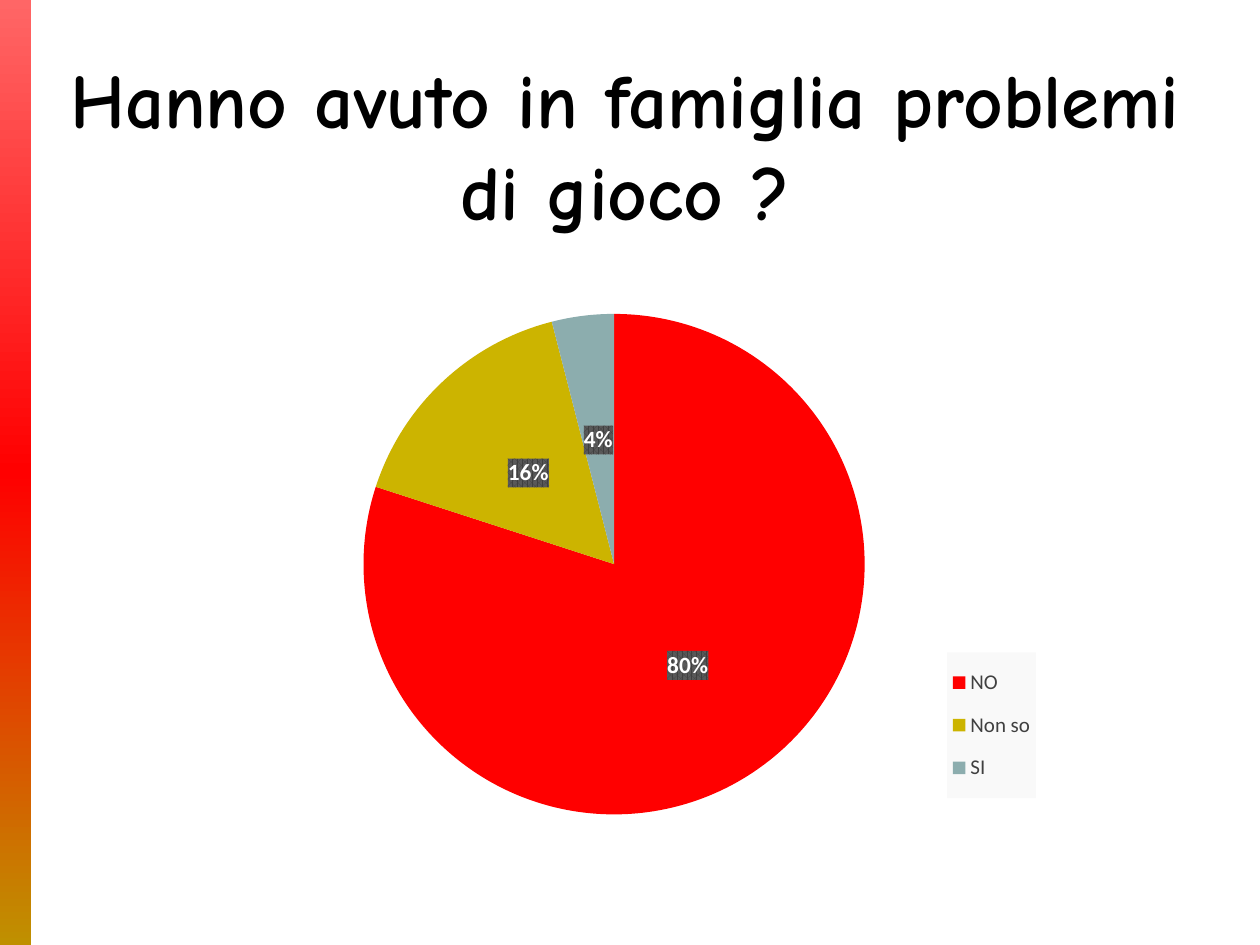
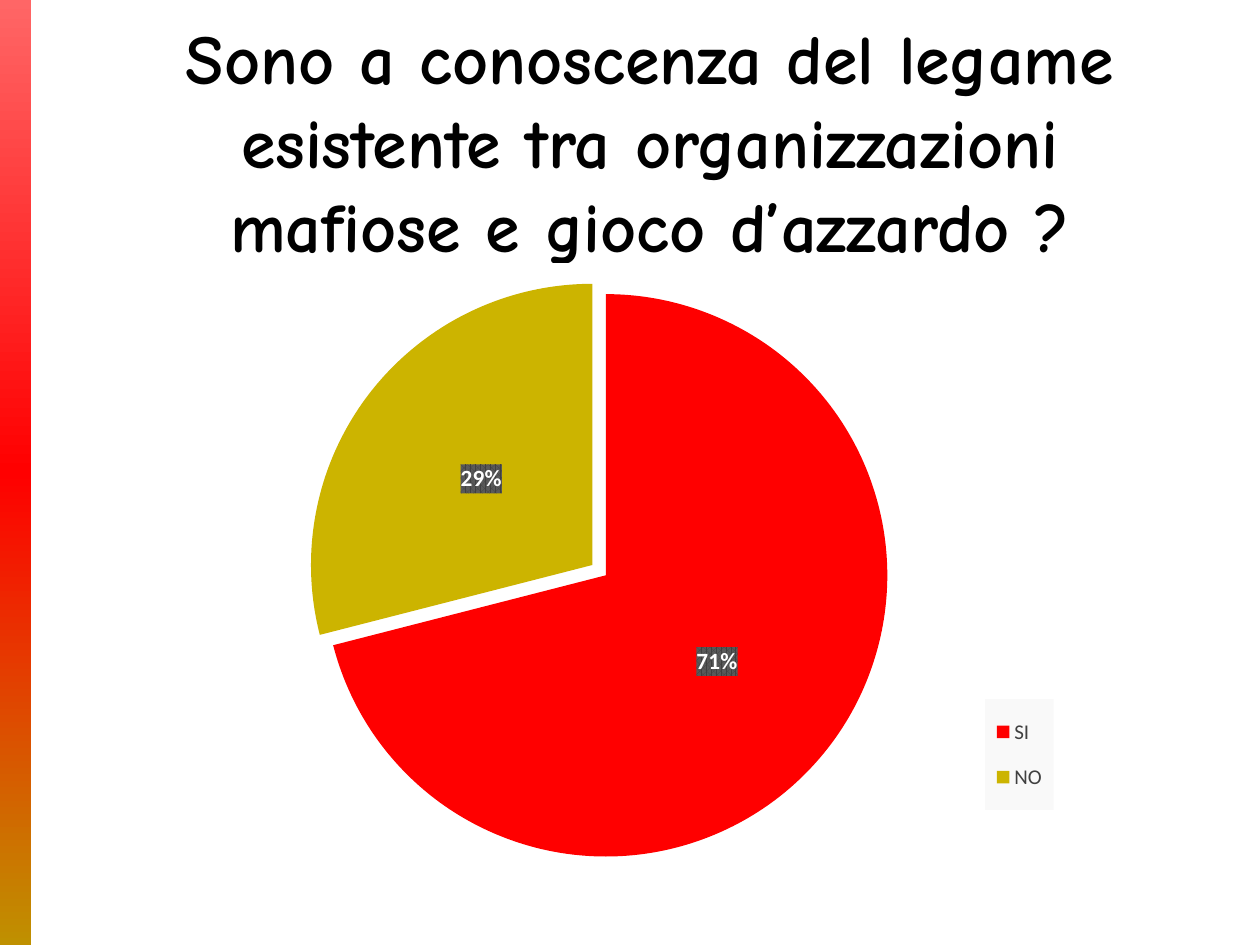
"""Build two survey slides, each with a question and a pie chart of the answers."""
from copy import deepcopy
from dataclasses import dataclass

from pptx import Presentation
from pptx.chart.data import CategoryChartData
from pptx.dml.color import RGBColor
from pptx.enum.chart import XL_CHART_TYPE, XL_LABEL_POSITION, XL_LEGEND_POSITION
from pptx.enum.shapes import MSO_SHAPE
from pptx.enum.text import MSO_ANCHOR, MSO_AUTO_SIZE, PP_ALIGN
from pptx.oxml import parse_xml
from pptx.oxml.ns import nsdecls
from pptx.util import Pt


@dataclass(frozen=True)
class Theme:
    title_font: str = "Comic Neue"
    chart_font: str = "Calibri"
    title_color: str = "000000"
    background: str = "FFFFFF"
    slices: tuple = ("FF0000", "CCB400", "8CADAE")
    band: tuple = ((0, "FF6666"), (0.5, "FF0000"), (1, "BF9000"))
    label_text: str = "FFFFFF"
    label_pattern: tuple = ("404040", "595959")
    legend_text: str = "404040"
    legend_fill: str = "F9F9F9"
    chart_size: float = 10
    legend_size: float = 12
    label_size: float = 13.3


def chart_part(tag, content):
    """Return a chart element with the given content."""
    return parse_xml(f"<c:{tag} {nsdecls('c', 'a')}>{content}</c:{tag}>")


def manual_layout(place, chart_place, target=""):
    """Return a layout from a place in points inside the chart."""
    chart_width, chart_height = chart_place[2:]
    x, y, width, height = (
        length / whole for length, whole in zip(place, (chart_width, chart_height) * 2))
    return chart_part("layout", (
        f'<c:manualLayout>{target}<c:xMode val="edge"/><c:yMode val="edge"/>'
        f'<c:x val="{x}"/><c:y val="{y}"/><c:w val="{width}"/><c:h val="{height}"/>'
        "</c:manualLayout>"))


theme = Theme()
questions = [
    dict(title="Hanno avuto in famiglia problemi di gioco ?", title_size=44,
         title_place=(19.8, 20.6, 675, 118), chart_place=(101, 167.8, 619, 308.9),
         answers={"NO": 80, "Non so": 16, "SI": 4}, pulled_out={},
         plot=(106.5, 11.1, 286.7, 287), legend=(440.4, 205.2, 50.8, 83.4)),
    dict(title="Sono a conoscenza del legame esistente tra organizzazioni mafiose "
               "e gioco d’azzardo ?", title_size=40,
         title_place=(59.6, 26, 623.5, 129.9), chart_place=(25.2, 150.3, 653.8, 343.4),
         answers={"SI": 71, "NO": 29}, pulled_out={1: 6},
         plot=(152.3, 17.5, 337.4, 322.1), legend=(538, 249.4, 39.2, 63.5)),
]

deck = Presentation()
deck.slide_width, deck.slide_height = Pt(720), Pt(540)
layout = deck.slide_layouts[5]
pages = [deck.slides.add_slide(layout) for question in questions]

band = pages[0].shapes.add_shape(MSO_SHAPE.RECTANGLE, 0, 0, Pt(18), deck.slide_height)
band.shadow.inherit = False
band.line.fill.background()
band.fill.gradient()
band.fill.gradient_angle = 270
last_stop = band.element.xpath(".//a:gs")[-1]
last_stop.addprevious(deepcopy(last_stop))
for stop, (position, color) in zip(band.fill.gradient_stops, theme.band):
    stop.position = position
    stop.color.rgb = RGBColor.from_string(color)
layout.shapes.element.append(band.element)

for page, question in zip(pages, questions):
    title = page.shapes.title
    title.left, title.top, title.width, title.height = map(Pt, question["title_place"])
    frame = title.text_frame
    frame.text = question["title"]
    frame.word_wrap = True
    frame.auto_size = MSO_AUTO_SIZE.NONE
    frame.vertical_anchor = MSO_ANCHOR.BOTTOM
    paragraph = frame.paragraphs[0]
    paragraph.alignment = PP_ALIGN.CENTER
    span = paragraph.runs[0]
    span.font.name = theme.title_font
    span.font.size = Pt(question["title_size"])
    span.font.bold = True
    span.font.color.rgb = RGBColor.from_string(theme.title_color)

    data = CategoryChartData()
    data.categories = list(question["answers"])
    data.add_series("Series 1", list(question["answers"].values()))
    chart_place = question["chart_place"]
    chart = page.shapes.add_chart(XL_CHART_TYPE.PIE, *map(Pt, chart_place), data).chart
    chart.has_title = False
    chart.has_legend = True
    chart.legend.position = XL_LEGEND_POSITION.RIGHT
    chart.legend.include_in_layout = False
    chart.plots[0].vary_by_categories = True
    series = chart.plots[0].series[0]
    labels = series.data_labels
    labels.show_percentage = True
    labels.show_value = False
    labels.number_format = "0%"
    labels.number_format_is_linked = False
    labels.position = XL_LABEL_POSITION.CENTER

    for font, size, color in ((chart.font, theme.chart_size, theme.title_color),
                              (chart.legend.font, theme.legend_size, theme.legend_text),
                              (labels.font, theme.label_size, theme.label_text)):
        font.name = theme.chart_font
        font.size = Pt(size)
        font.color.rgb = RGBColor.from_string(color)
    labels.font.bold = True

    for index in range(len(question["answers"])):
        fill = series.points[index].format.fill
        fill.solid()
        fill.fore_color.rgb = RGBColor.from_string(theme.slices[index])
    for index, distance in question["pulled_out"].items():
        point = chart.element.xpath(f".//c:dPt[c:idx/@val='{index}']/c:spPr")[0]
        point.addprevious(parse_xml(f'<c:explosion {nsdecls("c")} val="{distance}"/>'))

    white = f'<a:solidFill><a:srgbClr val="{theme.background}"/></a:solidFill>'
    chart.element.xpath("./c:chart")[0].addnext(
        chart_part("spPr", f'{white}<a:ln w="9525">{white}</a:ln>'))
    dark, light = theme.label_pattern
    chart.element.xpath(".//c:dLbls/c:numFmt")[0].addnext(chart_part("spPr", (
        f'<a:pattFill prst="pct75"><a:fgClr><a:srgbClr val="{dark}"/></a:fgClr>'
        f'<a:bgClr><a:srgbClr val="{light}"/></a:bgClr></a:pattFill>')))
    for old_layout in chart.element.xpath(".//c:plotArea/c:layout | .//c:legend/c:layout"):
        old_layout.getparent().remove(old_layout)
    chart.element.xpath(".//c:plotArea")[0].insert(0, manual_layout(
        question["plot"], chart_place, '<c:layoutTarget val="inner"/>'))
    chart.element.xpath(".//c:legend/c:legendPos")[0].addnext(
        manual_layout(question["legend"], chart_place))
    chart.element.xpath(".//c:legend/c:overlay")[0].addnext(chart_part(
        "spPr", f'<a:solidFill><a:srgbClr val="{theme.legend_fill}"/></a:solidFill>'))

deck.save("out.pptx")
